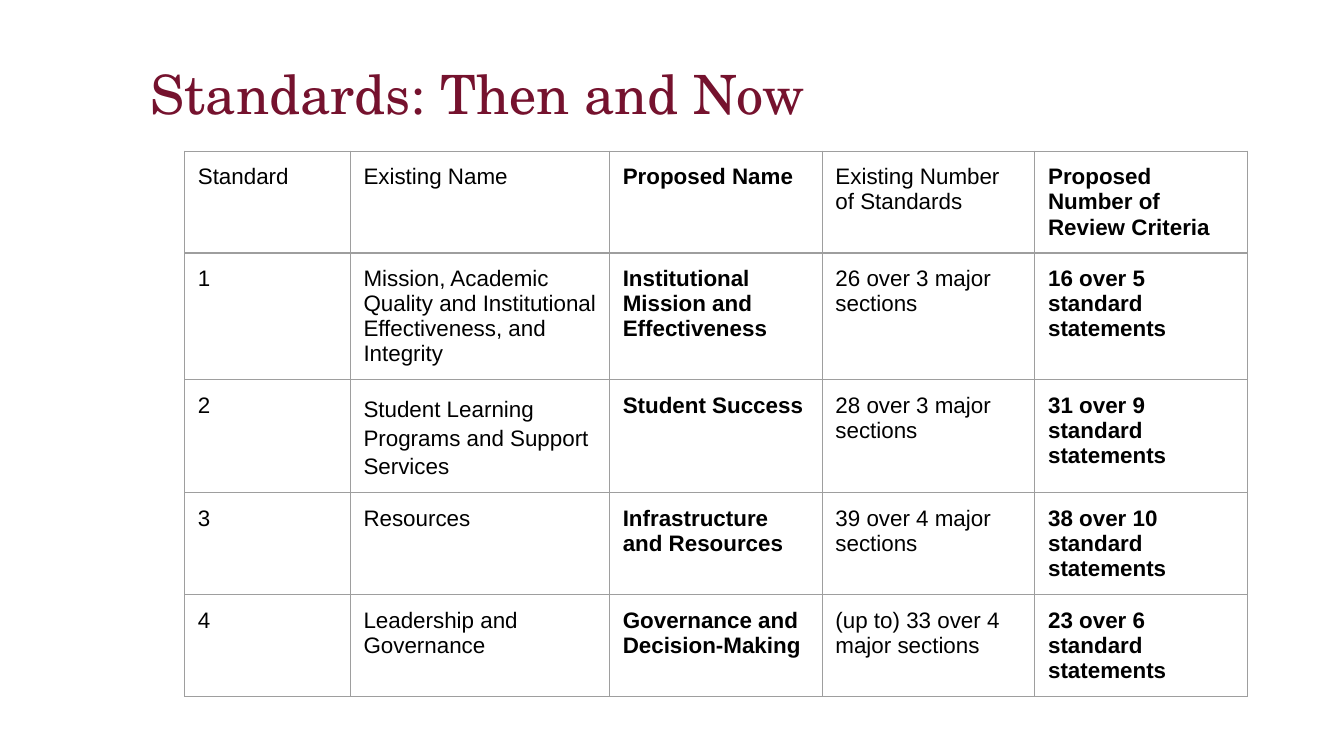
from lxml.etree import SubElement
from pptx import Presentation
from pptx.dml.color import RGBColor as RGB
from pptx.enum.text import MSO_ANCHOR as Anchor, MSO_AUTO_SIZE as AutoSize, PP_ALIGN as Align
from pptx.oxml.ns import qn
from pptx.util import Cm, Pt

HEADING = "Standards: Then and Now"
COLUMNS = [
    ("Standard", 3.13, False),
    ("Existing Name", 4.9, False),
    ("Proposed Name", 4.02, True),
    ("Existing Number of Standards", 4.02, False),
    ("Proposed Number of Review Criteria", 4.02, True),
]
STANDARDS = [
    ("1", "Mission, Academic Quality and Institutional Effectiveness, and Integrity",
     "Institutional Mission and Effectiveness",
     "26 over 3 major sections", "16 over 5 standard statements"),
    ("2", "Student Learning Programs and Support Services", "Student Success",
     "28 over 3 major sections", "31 over 9 standard statements"),
    ("3", "Resources", "Infrastructure and Resources",
     "39 over 4 major sections", "38 over 10 standard statements"),
    ("4", "Leadership and Governance", "Governance and Decision-Making",
     "(up to) 33 over 4 major sections", "23 over 6 standard statements"),
]
LINE_SPACING = {(2, 1): 1.15}
ROW_HEIGHT = 1.07

THEME = {
    "heading": ("TeX Gyre Schola", 29, "75122E"),
    "body": ("Arial", 12, "000000"),
    "border": ("9E9E9E", 0.75),
}


def style(paragraph, role, bold=False):
    name, size, color = THEME[role]
    for run in paragraph.runs:
        run.font.name = name
        run.font.size = Pt(size)
        run.font.bold = bold
        run.font.color.rgb = RGB.from_string(color)


def set_margins(box, horizontal, vertical):
    box.margin_left = box.margin_right = Cm(horizontal)
    box.margin_top = box.margin_bottom = Cm(vertical)


def add_borders(cell):
    color, width = THEME["border"]
    properties = cell._tc.get_or_add_tcPr()
    for position, side in enumerate(("lnL", "lnR", "lnT", "lnB")):
        line = SubElement(properties, qn(f"a:{side}"), w=str(Pt(width)))
        fill = SubElement(line, qn("a:solidFill"))
        SubElement(fill, qn("a:srgbClr"), val=color)
        properties.insert(position, line)


def add_heading(slide):
    heading = slide.shapes.title
    heading.left, heading.top = Cm(2.67), Cm(0.99)
    heading.width, heading.height = Cm(20.93), Cm(1.5)
    frame = heading.text_frame
    frame.text = HEADING
    frame.word_wrap = True
    frame.auto_size = AutoSize.NONE
    frame.vertical_anchor = Anchor.BOTTOM
    set_margins(frame, 0.18, 0.1)
    paragraph = frame.paragraphs[0]
    paragraph.alignment = Align.LEFT
    paragraph.line_spacing = 0.9
    style(paragraph, "heading")


def add_standards(slide):
    rows = [[name for name, _, _ in COLUMNS], *STANDARDS]
    total_width = sum(width for _, width, _ in COLUMNS)
    table = slide.shapes.add_table(
        len(rows), len(COLUMNS), Cm(3.49), Cm(2.86),
        Cm(total_width), Cm(ROW_HEIGHT * len(rows))).table
    table.first_row = table.horz_banding = False
    for column, (_, width, _) in zip(table.columns, COLUMNS):
        column.width = Cm(width)
    for r, texts in enumerate(rows):
        table.rows[r].height = Cm(ROW_HEIGHT)
        for c, text in enumerate(texts):
            cell = table.cell(r, c)
            cell.text_frame.text = text
            cell.fill.background()
            cell.vertical_anchor = Anchor.TOP
            set_margins(cell, 0.25, 0.25)
            add_borders(cell)
            paragraph = cell.text_frame.paragraphs[0]
            paragraph.line_spacing = LINE_SPACING.get((r, c), 1.0)
            style(paragraph, "body", bold=COLUMNS[c][2])


def main():
    deck = Presentation()
    deck.slide_width, deck.slide_height = Cm(25.4), Cm(14.29)
    slide = deck.slides.add_slide(deck.slide_layouts[5])
    add_heading(slide)
    add_standards(slide)
    deck.save("out.pptx")


if __name__ == "__main__":
    main()
